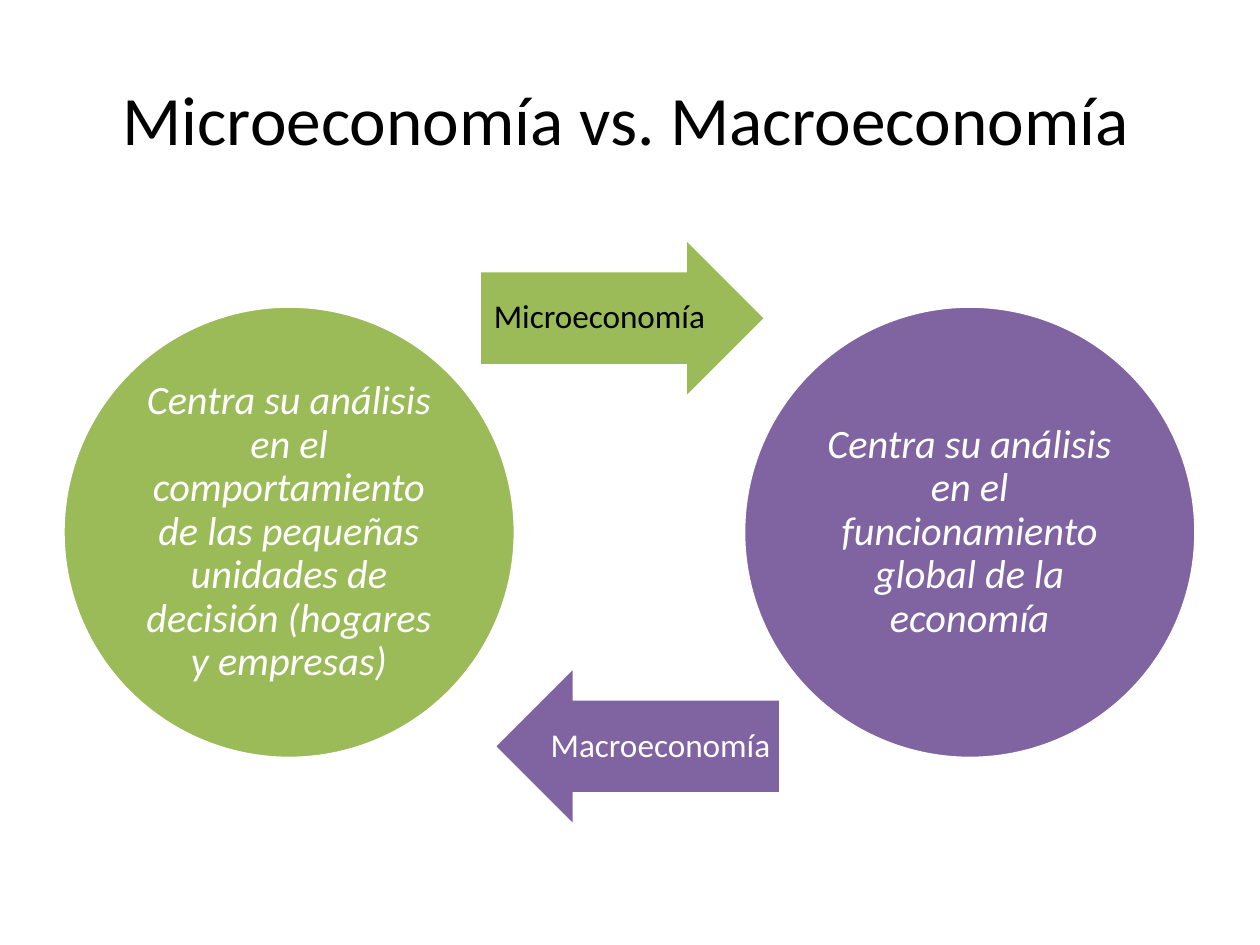
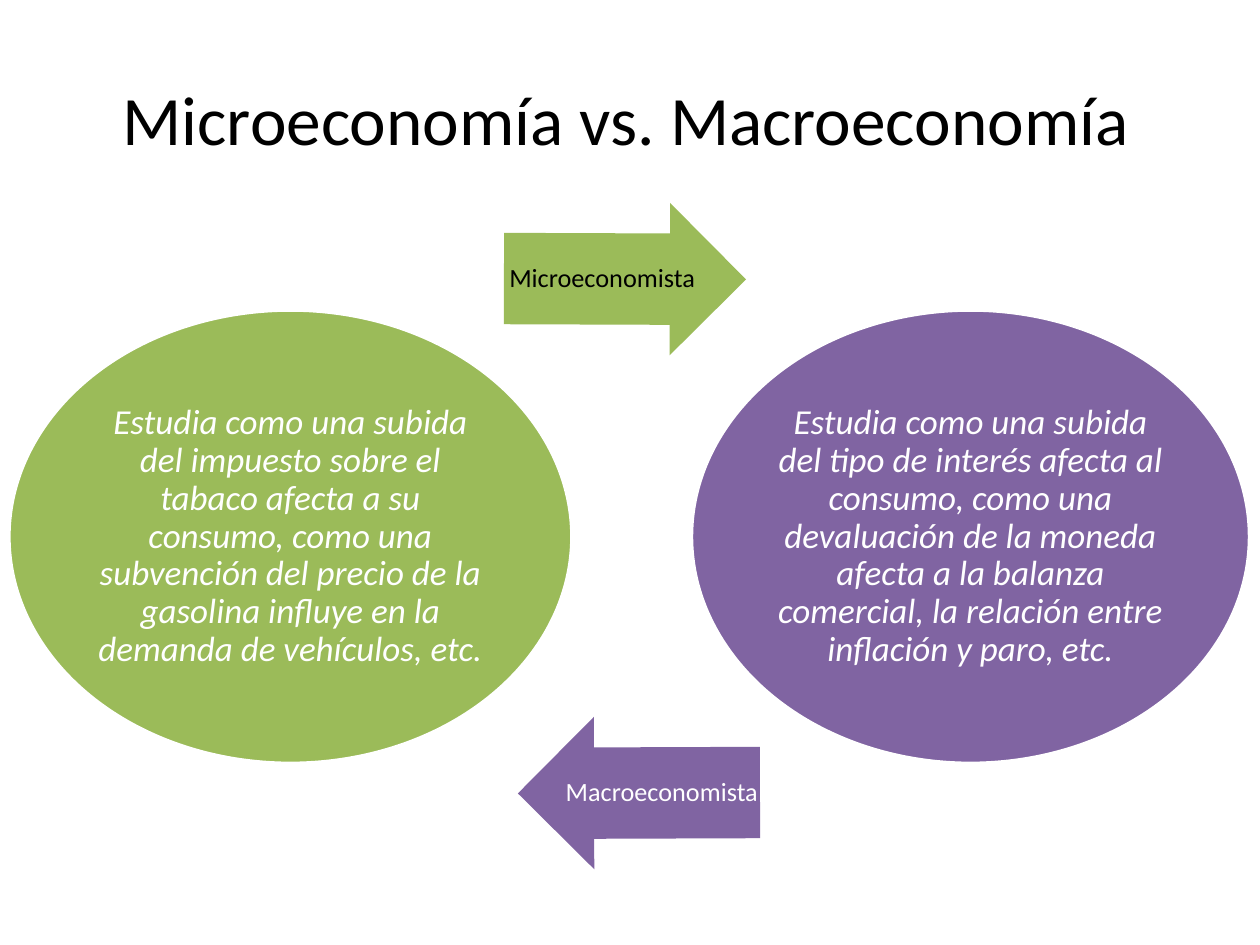
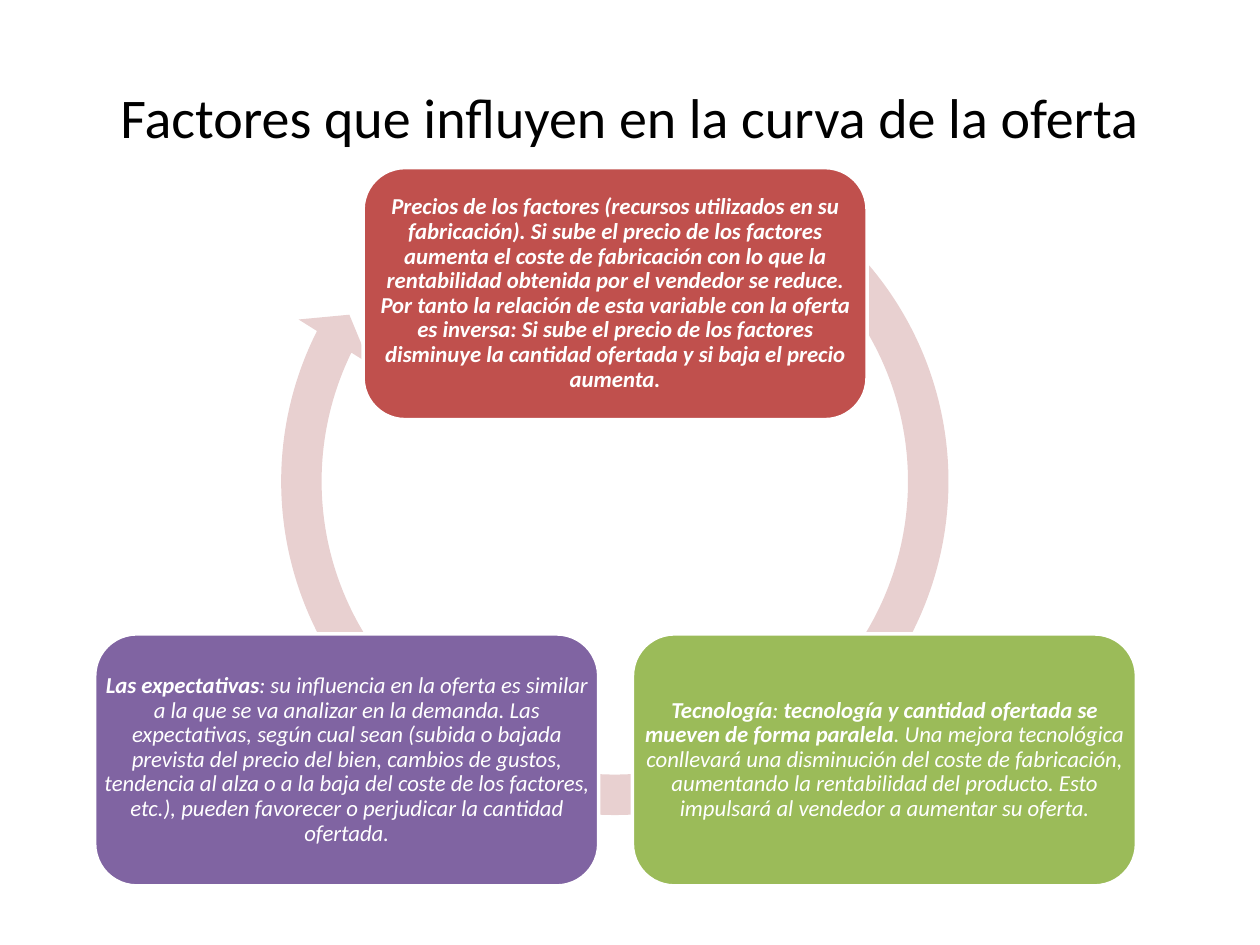
import pptx
import pptx.dml.color
import pptx.enum.shapes
import pptx.enum.text
import pptx.util

Cm = pptx.util.Cm
Pt = pptx.util.Pt
SHAPE = pptx.enum.shapes.MSO_SHAPE

COLORS = {
    "micro": "9BBB59",
    "macro": "8064A2",
    "prices": "C0504D",
    "ring": "E8D0D0",
    "dark": "000000",
    "light": "FFFFFF",
}
FONT = "Calibri"
TITLE_ONLY = 5
ARROW_HEIGHT = 3.07
CARD_WIDTH, CARD_HEIGHT = 10.16, 5.08
CARD_ROW_TOP = 12.78


def rgb(name):
    return pptx.dml.color.RGBColor.from_string(COLORS[name])


def add_slide(prs, title, size, left, top):
    s = prs.slides.add_slide(prs.slide_layouts[TITLE_ONLY])
    sp = s.shapes.title
    sp.left, sp.top, sp.width, sp.height = Cm(left), Cm(top), Cm(22.86), Cm(3.18)
    sp.text_frame.text = title
    format_paragraph(sp.text_frame.paragraphs[0], size, "dark")
    return s


def format_paragraph(p, size, color, italic=False):
    p.alignment = pptx.enum.text.PP_ALIGN.CENTER
    p.font.name = FONT
    p.font.size = Pt(size)
    p.font.italic = italic
    p.font.color.rgb = rgb(color)


def fill_text(sp, runs, size, color, inset, italic=False):
    """Write one centred paragraph of (text, bold) runs."""
    tf = sp.text_frame
    tf.word_wrap = True
    tf.vertical_anchor = pptx.enum.text.MSO_ANCHOR.MIDDLE
    tf.margin_left = tf.margin_right = tf.margin_top = tf.margin_bottom = Cm(inset)
    p = tf.paragraphs[0]
    p.line_spacing = 0.9
    for text, bold in runs:
        r = p.add_run()
        r.text = text
        r.font.bold = bold
    format_paragraph(p, size, color, italic)


def add_figure(s, kind, box, fill, outlined=False):
    sp = s.shapes.add_shape(kind, *map(Cm, box))
    sp.shadow.inherit = False
    sp.fill.solid()
    sp.fill.fore_color.rgb = rgb(fill)
    if outlined:
        sp.line.color.rgb = rgb("light")
        sp.line.width = Pt(2)
    else:
        sp.line.fill.background()
    return sp


def add_circle(s, box, fill, text, size):
    sp = add_figure(s, SHAPE.OVAL, box, fill, outlined=True)
    fill_text(sp, [(text, False)], size, "light", 0.08, italic=True)


def add_arrow(s, kind, box, fill, text, size, color, tilt):
    sp = add_figure(s, kind, box, fill)
    sp.adjustments[0], sp.adjustments[1] = 0.6, 0.5
    sp.rotation = tilt
    fill_text(sp, [(text, False)], size, color, 0)


def add_comparison(s, circles, circle_size, arrows, arrow_width, arrow_size, tilt=0):
    """Draw the micro and macro circles, each followed by its labelled arrow."""
    styles = [
        ("micro", SHAPE.RIGHT_ARROW, "dark", tilt),
        ("macro", SHAPE.LEFT_ARROW, "light", -tilt),
    ]
    for style, (box, text), (left, top, label) in zip(styles, circles, arrows):
        fill, kind, color, angle = style
        add_circle(s, box, fill, text, circle_size)
        arrow_box = (left, top, arrow_width, ARROW_HEIGHT)
        add_arrow(s, kind, arrow_box, fill, label, arrow_size, color, angle)


def add_ring(s):
    sp = add_figure(s, SHAPE.CIRCULAR_ARROW, (5.23, 2.54, 14.33, 14.33), "ring")
    thickness, head_width = 5.69 / 100, 5.91 / 100
    head, end, start = (degrees * 0.6 for degrees in (5.68, 206.44, 304.92))
    for i, value in enumerate((thickness, head, end, start, head_width)):
        sp.adjustments[i] = value


def add_card(s, left, top, fill, runs):
    """Lay the text over the whole card, so the round corners do not narrow it."""
    box = (left, top, CARD_WIDTH, CARD_HEIGHT)
    add_figure(s, SHAPE.ROUNDED_RECTANGLE, box, fill, outlined=True)
    label = s.shapes.add_textbox(*map(Cm, box))
    fill_text(label, runs, 13, "light", 0.13, italic=True)


def main():
    prs = pptx.Presentation()
    prs.slide_width, prs.slide_height = Cm(25.4), Cm(19.05)
    versus = ("Microeconomía vs. Macroeconomía", 39.6, 1.19, 0.79)

    s = add_slide(prs, *versus)
    add_comparison(
        s,
        [
            ((1.27, 6.17, 9.12, 9.12),
             "Centra su análisis en el comportamiento de las pequeñas unidades "
             "de decisión (hogares y empresas)"),
            ((14.99, 6.17, 9.12, 9.12),
             "Centra su análisis en el funcionamiento global de la economía"),
        ],
        23,
        [(9.7, 4.88, "Microeconomía"), (10.01, 13.51, "Macroeconomía")],
        5.69,
        19,
    )

    s = add_slide(prs, *versus)
    add_comparison(
        s,
        [
            ((0.18, 6.25, 11.35, 9.14),
             "Estudia como una subida del impuesto sobre el tabaco afecta a su "
             "consumo, como una subvención del precio de la gasolina influye en "
             "la demanda de vehículos, etc."),
            ((13.94, 6.25, 11.25, 9.14),
             "Estudia como una subida del tipo de interés afecta al consumo, "
             "como una devaluación de la moneda afecta a la balanza comercial, "
             "la relación entre inflación y paro, etc."),
        ],
        20,
        [(10.16, 4.09, "Microeconomista"), (10.44, 14.45, "Macroeconomista")],
        4.88,
        15,
        tilt=0.2,
    )

    s = add_slide(prs, "Factores que influyen en la curva de la oferta", 32, 1.27, 0.76)
    add_ring(s)
    add_card(s, 7.32, 3.38, "prices", [
        ("Precios de los factores (recursos utilizados en su fabricación). Si sube "
         "el precio de los factores aumenta el coste de fabricación con lo que la "
         "rentabilidad obtenida por el vendedor se reduce. Por tanto la relación de "
         "esta variable con la oferta es inversa: Si sube el precio de los factores "
         "disminuye la cantidad ofertada y si baja el precio aumenta.", True),
    ])
    add_card(s, 12.75, CARD_ROW_TOP, "micro", [
        ("Tecnología", True),
        (": ", False),
        ("tecnología y cantidad ofertada se mueven de forma paralela", True),
        (". Una mejora tecnológica conllevará una disminución del coste de "
         "fabricación, aumentando la rentabilidad del producto. Esto impulsará al "
         "vendedor a aumentar su oferta.", False),
    ])
    add_card(s, 1.91, CARD_ROW_TOP, "macro", [
        ("Las expectativas", True),
        (": su influencia en la oferta es similar a la que se va analizar en la "
         "demanda. Las expectativas, según cual sean (subida o bajada prevista del "
         "precio del bien, cambios de gustos, tendencia al alza o a la baja del "
         "coste de los factores, etc.), pueden favorecer o perjudicar la cantidad "
         "ofertada.", False),
    ])

    prs.save("out.pptx")


if __name__ == "__main__":
    main()
